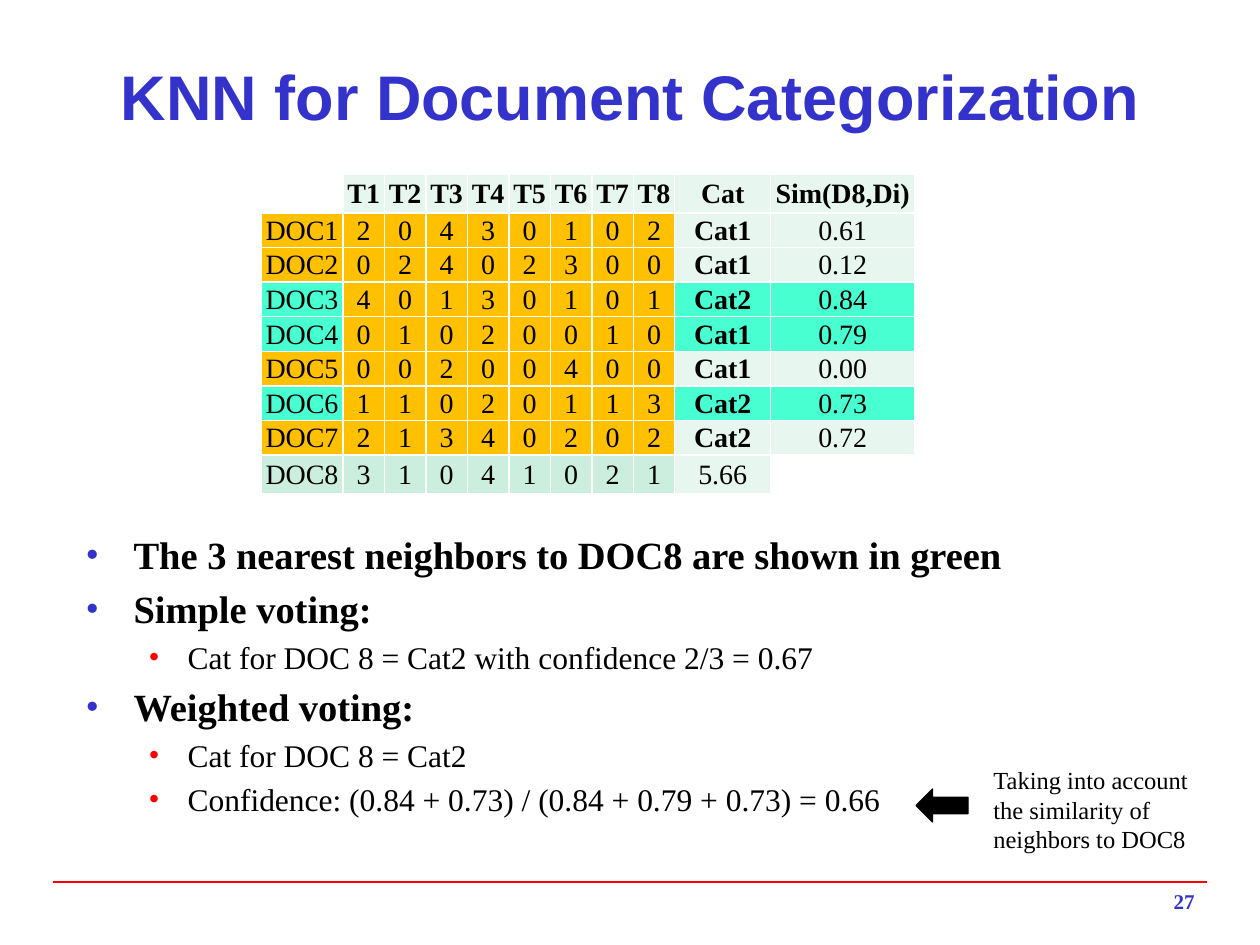
from dataclasses import dataclass
from typing import Any, NamedTuple

import lxml.etree
import pptx
import pptx.dml.color
import pptx.enum.shapes
import pptx.enum.text
import pptx.oxml
import pptx.oxml.ns
import pptx.util

PX_PER_INCH = 126
ALIGN = pptx.enum.text.PP_ALIGN
ANCHOR = pptx.enum.text.MSO_ANCHOR


@dataclass(frozen=True)
class Theme:
    heading_font: str = "Arial"
    text_font: str = "Times New Roman"
    blue: str = "3333CC"
    red: str = "FF0000"
    black: str = "000000"
    white: str = "FFFFFF"
    term: str = "FFC000"
    neighbor: str = "47FFD1"
    query: str = "CCEEDF"
    plain: str = "E7F6EF"
    title_size: int = 36
    point_size: int = 22
    detail_size: int = 18
    table_size: int = 16
    note_size: int = 14
    number_size: int = 12


THEME = Theme()


class Box(NamedTuple):
    left: int
    top: int
    width: int
    height: int


class Level(NamedTuple):
    size: int
    bold: bool
    margin: int
    hanging: int
    bullet_color: str


class Point(NamedTuple):
    level: int
    text: str


class Document(NamedTuple):
    name: str
    counts: str
    category: str
    similarity: str
    is_neighbor: bool = False


LEVELS = [
    Level(THEME.point_size, True, 48, 48, THEME.blue),
    Level(THEME.detail_size, False, 102, 39, THEME.red),
]
POINTS = [
    Point(0, "The 3 nearest neighbors to DOC8 are shown in green"),
    Point(0, "Simple voting:"),
    Point(1, "Cat for DOC 8 = Cat2 with confidence 2/3 = 0.67"),
    Point(0, "Weighted voting:"),
    Point(1, "Cat for DOC 8 = Cat2"),
    Point(1, "Confidence: (0.84 + 0.73) / (0.84 + 0.79 + 0.73) = 0.66"),
]
DOCUMENTS = [
    Document("DOC1", "20430102", "Cat1", "0.61"),
    Document("DOC2", "02402300", "Cat1", "0.12"),
    Document("DOC3", "40130101", "Cat2", "0.84", True),
    Document("DOC4", "01020010", "Cat1", "0.79", True),
    Document("DOC5", "00200400", "Cat1", "0.00"),
    Document("DOC6", "11020113", "Cat2", "0.73", True),
    Document("DOC7", "21340202", "Cat2", "0.72"),
]
QUERY = Document("DOC8", "31041021", "5.66", "")
TERM_COUNT = len(QUERY.counts)


def px(length: int) -> pptx.util.Emu:
    return pptx.util.Emu(round(length * 914400 / PX_PER_INCH))


def rgb(color: str) -> pptx.dml.color.RGBColor:
    return pptx.dml.color.RGBColor.from_string(color)


def assign(target: Any, values: dict[str, Any]) -> None:
    for name, value in values.items():
        setattr(target, name, value)


def place(shape: Any, box: Box) -> None:
    assign(shape, {side: px(length) for side, length in box._asdict().items()})


def write(paragraph: Any, text: str, size: int, color: str = THEME.black,
          bold: bool = False, font: str = THEME.text_font) -> None:
    run = paragraph.add_run()
    run.text = text
    assign(run.font, {"size": pptx.util.Pt(size), "bold": bold, "name": font})
    run.font.color.rgb = rgb(color)


def add_bullet(paragraph: Any, level: Level) -> None:
    properties = paragraph._p.get_or_add_pPr()
    properties.set("marL", str(px(level.margin)))
    properties.set("indent", str(px(-level.hanging)))
    namespace = pptx.oxml.ns.nsdecls("a")
    for xml in (
        f'<a:buClr {namespace}><a:srgbClr val="{level.bullet_color}"/></a:buClr>',
        f'<a:buFont {namespace} typeface="{THEME.text_font}"/>',
        f'<a:buChar {namespace} char="•"/>',
    ):
        properties.append(pptx.oxml.parse_xml(xml))


def fill_cell(cell: Any, text: str, fill: str, bold: bool = False) -> None:
    assign(cell, {"margin_left": px(1), "margin_right": px(1), "margin_top": px(1),
                  "margin_bottom": 0, "vertical_anchor": ANCHOR.MIDDLE})
    properties = cell._tc.get_or_add_tcPr()
    for side in "LRTB":
        properties.append(pptx.oxml.parse_xml(
            f'<a:ln{side} {pptx.oxml.ns.nsdecls("a")} w="{pptx.util.Pt(1)}"><a:solidFill>'
            f'<a:srgbClr val="{THEME.white}"/></a:solidFill></a:ln{side}>'))
    cell.fill.solid()
    cell.fill.fore_color.rgb = rgb(fill)
    paragraph = cell.text_frame.paragraphs[0]
    paragraph.alignment = ALIGN.CENTER
    write(paragraph, text, THEME.table_size, bold=bold)


def add_similarity_table(slide: Any, box: Box) -> None:
    terms = [f"T{number}" for number in range(1, TERM_COUNT + 1)]
    texts = [["", *terms, "Cat", "Sim(D8,Di)"]]
    fills = [[THEME.white] + [THEME.plain] * (TERM_COUNT + 2)]
    for document in DOCUMENTS:
        texts.append([document.name, *document.counts, document.category, document.similarity])
        label, result = ((THEME.neighbor, THEME.neighbor) if document.is_neighbor
                         else (THEME.term, THEME.plain))
        fills.append([label] + [THEME.term] * TERM_COUNT + [result] * 2)
    texts.append([QUERY.name, *QUERY.counts, QUERY.category, QUERY.similarity])
    fills.append([THEME.query] * (TERM_COUNT + 1) + [THEME.plain, THEME.white])

    table = slide.shapes.add_table(len(texts), len(texts[0]), *map(px, box)).table
    assign(table, {"first_row": False, "horz_banding": False})
    widths = [px(82), *[px(332) // TERM_COUNT] * TERM_COUNT, px(96), px(144)]
    for column, width in zip(table.columns, widths):
        column.width = width
    for row in table.rows:
        row.height = px(box.height) // len(texts)
    category_column = TERM_COUNT + 1
    last_row = len(texts) - 1
    for r, (row_texts, row_fills) in enumerate(zip(texts, fills)):
        for c, (text, fill) in enumerate(zip(row_texts, row_fills)):
            bold = r == 0 or (c == category_column and r < last_row)
            fill_cell(table.cell(r, c), text, fill, bold)


def add_label(slide: Any, box: Box, text: str, size: int, alignment: Any,
              color: str = THEME.black, bold: bool = False) -> None:
    frame = slide.shapes.add_textbox(*map(px, box)).text_frame
    frame.word_wrap = True
    frame.paragraphs[0].alignment = alignment
    write(frame.paragraphs[0], text, size, color, bold)


def add_footer_rule(slide: Any) -> None:
    rule = slide.shapes.add_connector(
        pptx.enum.shapes.MSO_CONNECTOR.STRAIGHT, px(53), px(882), px(1207), px(882))
    rule.line.color.rgb = rgb(THEME.red)
    rule.line.width = pptx.util.Pt(1)
    lxml.etree.SubElement(rule._element.spPr, pptx.oxml.ns.qn("a:effectLst"))


def add_note_arrow(slide: Any, box: Box) -> None:
    arrow = slide.shapes.add_shape(
        pptx.enum.shapes.MSO_SHAPE.RIGHT_ARROW, *map(px, box))
    arrow.rotation = 180
    arrow.shadow.inherit = False
    arrow.fill.solid()
    arrow.fill.fore_color.rgb = rgb(THEME.black)
    arrow.line.color.rgb = rgb(THEME.black)
    arrow.line.width = pptx.util.Pt(0.75)


def main() -> None:
    deck = pptx.Presentation()
    assign(deck, {"slide_width": px(1260), "slide_height": px(945)})
    slide = deck.slides.add_slide(deck.slide_layouts[1])
    add_footer_rule(slide)

    title, body = slide.placeholders
    place(title, Box(63, 53, 1134, 84))
    place(body, Box(73, 525, 1134, 314))
    for placeholder, anchor in ((title, ANCHOR.MIDDLE), (body, ANCHOR.TOP)):
        assign(placeholder.text_frame, {
            "vertical_anchor": anchor, "word_wrap": True,
            "auto_size": pptx.enum.text.MSO_AUTO_SIZE.NONE})
    heading = title.text_frame.paragraphs[0]
    heading.alignment = ALIGN.CENTER
    write(heading, "KNN for Document Categorization", THEME.title_size,
          THEME.blue, True, THEME.heading_font)
    for index, point in enumerate(POINTS):
        frame = body.text_frame
        paragraph = frame.add_paragraph() if index else frame.paragraphs[0]
        paragraph.level = point.level
        level = LEVELS[point.level]
        add_bullet(paragraph, level)
        write(paragraph, point.text, level.size, bold=level.bold)

    add_label(slide, Box(945, 882, 262, 42), "27", THEME.number_size,
              ALIGN.RIGHT, THEME.blue, True)
    add_similarity_table(slide, Box(261, 174, 654, 292))
    add_label(slide, Box(981, 759, 239, 102),
              "Taking into account the similarity of neighbors to DOC8",
              THEME.note_size, ALIGN.LEFT)
    add_note_arrow(slide, Box(916, 789, 52, 33))
    deck.save("out.pptx")


if __name__ == "__main__":
    main()
